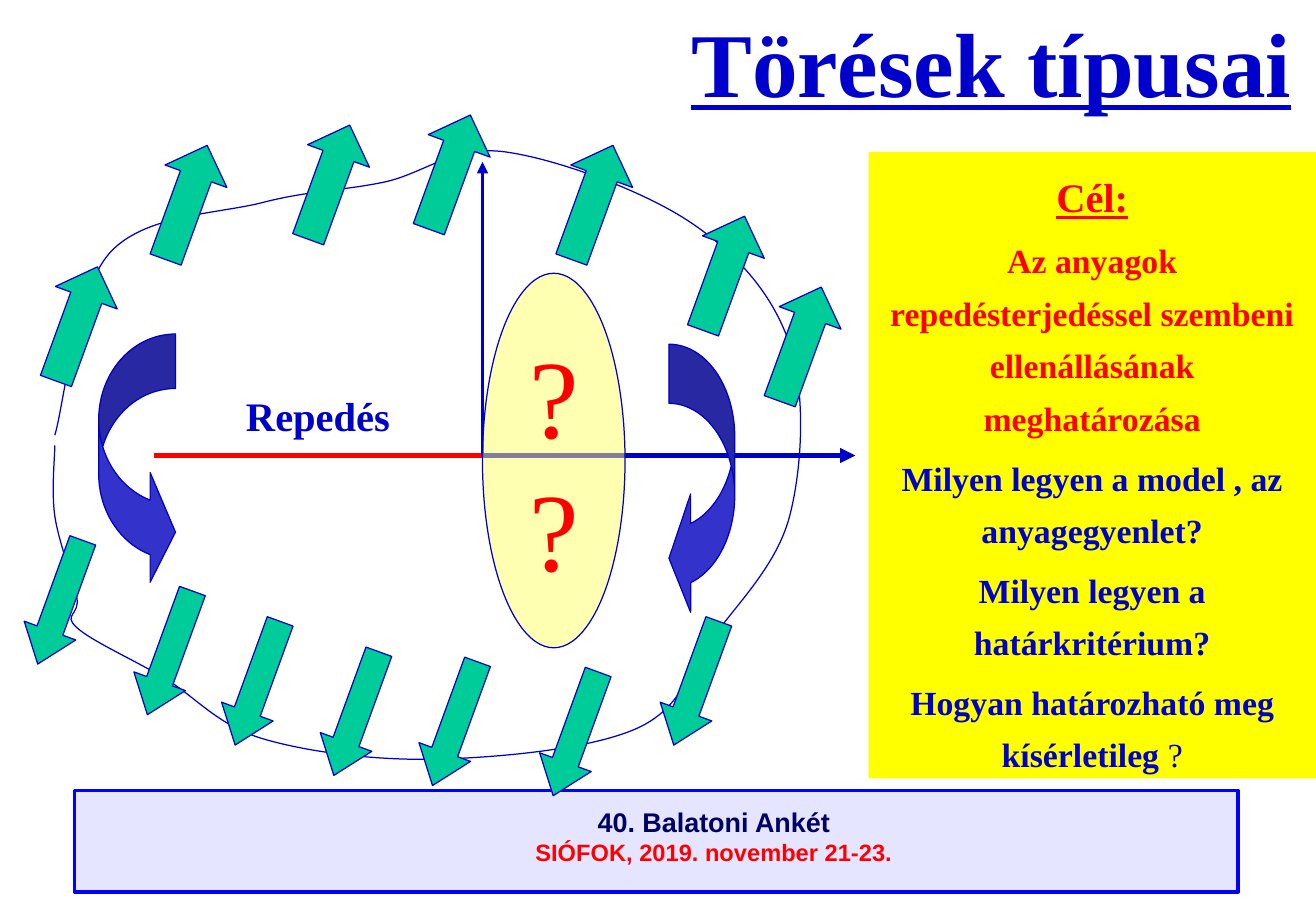
from dataclasses import dataclass

from lxml.etree import SubElement as Sub
from pptx import Presentation
from pptx.dml.color import RGBColor as Rgb
from pptx.enum.shapes import MSO_CONNECTOR as Link, MSO_SHAPE as Kind
from pptx.enum.text import MSO_ANCHOR as Anchor, MSO_AUTO_SIZE as Fit, PP_ALIGN as Align
from pptx.oxml.ns import qn
from pptx.util import Inches, Pt

COLS, ROWS = 120, 90


@dataclass(frozen=True)
class Theme:
    blue: str = "0000CC"
    red: str = "FF0000"
    green: str = "00CC99"
    bend: str = "3333CC"
    sun: str = "FFFF00"
    pale: str = "FFFF66"
    bar: str = "CCCCFF"
    edge: str = "0000FF"
    navy: str = "000066"
    serif: str = "Times New Roman"
    sans: str = "Arial"
    huge: int = 66
    title: int = 54
    head: int = 24
    body: int = 20
    foot: int = 16
    note: int = 14
    thin: float = 0.75
    mid: float = 2.25
    thick: float = 3


def write(frame, text, size, color, font=Theme.serif, bold=True, under=False,
          space=None, before=0, para=None):
    """Add a centred paragraph, or a further run to the given one."""
    if para is None:
        para = frame.paragraphs[0]
        if para.runs:
            para = frame.add_paragraph()
            para.space_before = Pt(before)
        else:
            para.space_before = Pt(0)
        para.alignment = Align.CENTER
        if space:
            para.line_spacing = space
    run = para.add_run()
    run.text = text
    face = run.font
    face.name, face.size = font, Pt(size)
    face.bold, face.underline = bold, under
    face.color.rgb = Rgb.from_string(color)
    return para


class Board:
    def __init__(self, deck, theme):
        self.theme = theme
        self.wide, self.high = deck.slide_width, deck.slide_height
        self.slide = deck.slides.add_slide(deck.slide_layouts[1])
        self.shapes = self.slide.shapes

    def x(self, col):
        return round(self.wide * col / COLS)

    def y(self, row):
        return round(self.high * row / ROWS)

    def area(self, col, row, wide, high):
        return self.x(col), self.y(row), self.x(wide), self.y(high)

    def stroke(self, item, color, width):
        item.line.color.rgb = Rgb.from_string(color)
        item.line.width = Pt(width)

    def shape(self, kind, box, fill, line=Theme.blue, width=Theme.thin,
              turn=0, adj=(), alpha=None):
        item = self.shapes.add_shape(kind, *self.area(*box))
        item.shadow.inherit = False
        item.rotation = turn
        for i, value in enumerate(adj):
            item.adjustments[i] = value
        item.fill.solid()
        item.fill.fore_color.rgb = Rgb.from_string(fill)
        if alpha:
            tint = item._element.spPr.find(qn("a:solidFill"))[0]
            Sub(tint, qn("a:alpha"), val=str(alpha * 1000))
        self.stroke(item, line, width)
        return item

    def line(self, start, end, color, width, arrow=False):
        item = self.shapes.add_connector(
            Link.STRAIGHT, self.x(start[0]), self.y(start[1]),
            self.x(end[0]), self.y(end[1]))
        self.stroke(item, color, width)
        if arrow:
            Sub(item._element.spPr.get_or_add_ln(), qn("a:tailEnd"), type="triangle")
        Sub(item._element.spPr, qn("a:effectLst"))

    def curve(self, knots):
        """Draw a smooth open line, one cubic piece between two knots."""
        dots = [(self.x(col), self.y(row)) for col, row in knots]
        pen = self.shapes.build_freeform(*dots[0])
        pen.add_line_segments(dots[1:], close=False)
        item = pen.convert_to_shape()
        item.shadow.inherit = False
        item.fill.background()
        self.stroke(item, self.theme.blue, self.theme.thin)
        root = item._element.spPr
        pts = [(int(pt.get("x")), int(pt.get("y"))) for pt in root.iter(qn("a:pt"))]
        ends = [pts[0], *pts, pts[-1]]
        steps = list(root.iter(qn("a:lnTo")))
        for step, a, b, c, d in zip(steps, ends, ends[1:], ends[2:], ends[3:]):
            step.tag = qn("a:cubicBezTo")
            step.remove(step[0])
            out = [q + (r - p) / 6 for p, q, r in zip(a, b, c)]
            into = [r - (s - q) / 6 for q, r, s in zip(b, c, d)]
            for px, py in (out, into, c):
                Sub(step, qn("a:pt"), x=str(round(px)), y=str(round(py)))

    def label(self, box, anchor=Anchor.MIDDLE):
        frame = self.shapes.add_textbox(*self.area(*box)).text_frame
        frame.word_wrap = True
        frame.vertical_anchor = anchor
        return frame

    def holder(self, item, box, anchor):
        item.left, item.top, item.width, item.height = self.area(*box)
        frame = item.text_frame
        frame.word_wrap, frame.auto_size = True, Fit.NONE
        frame.vertical_anchor = anchor
        frame.margin_left = frame.margin_right = Inches(0.1)
        frame.margin_top = frame.margin_bottom = Inches(0.05)
        return frame

    def plain(self, frame):
        for para in frame.paragraphs:
            prop = para._p.get_or_add_pPr()
            prop.set("marL", "0")
            prop.set("indent", "0")
            Sub(prop, qn("a:buNone"))


def main():
    deck = Presentation()
    deck.slide_width, deck.slide_height = Inches(10.83), Inches(7.5)
    look = Theme()
    board = Board(deck, look)

    # Footer bar
    board.shape(Kind.RECTANGLE, (6.8, 78.1, 106.1, 10), look.bar, look.edge,
                look.mid, alpha=50)
    foot = board.label((19.85, 79, 90.5, 7.3), Anchor.TOP)
    write(foot, "40. Balatoni Ankét", look.foot, look.navy, font=look.sans)
    write(foot, "SIÓFOK, 2019. november 21-23.", look.note, look.red, font=look.sans)

    # Title
    head = board.holder(board.shapes.title, (60.8, 0, 59.2, 12.1), Anchor.MIDDLE)
    write(head, "Törések típusai", look.title, look.blue, under=True)

    # Crack and axes
    tip = (44, 45)
    board.line((14, 45), tip, look.red, look.thick)
    board.line(tip, (78, 45), look.blue, look.thick, arrow=True)
    board.line(tip, (44, 16), look.blue, look.mid, arrow=True)
    write(board.label((20, 38, 18, 6)), "Repedés", look.head, look.blue)

    # Unknown zone at the crack tip
    zone = board.shape(Kind.OVAL, (44, 27, 13, 37), look.pale, alpha=50).text_frame
    zone.word_wrap, zone.vertical_anchor = False, Anchor.MIDDLE
    for mark in "??":
        write(zone, mark, look.huge, look.red, bold=False)

    # Body outline
    board.curve([(5, 43), (10, 25), (24, 20), (35, 18), (46, 15), (63, 22),
                 (72, 34), (72, 51), (65, 63), (58, 72), (40, 75), (24, 73),
                 (15, 67), (7, 62), (7, 59), (5, 51), (5, 44)])

    # Loads: up along the top, down along the bottom
    ups = [(4, 26), (14, 14), (27, 12), (38, 11), (51, 14), (63, 21), (70, 28)]
    downs = [(3, 53), (13, 58), (21, 61), (30, 64), (39, 65), (50, 66), (61, 61)]
    for kind, spots, size, adj in (
            (Kind.UP_ARROW, ups, (6, 12), (0.5, 0.5)),
            (Kind.DOWN_ARROW, downs, (5, 13), (0.5, 0.65))):
        for spot in spots:
            board.shape(kind, spot + size, look.green, turn=20, adj=adj)

    # Bending moments
    board.shape(Kind.CURVED_RIGHT_ARROW, (9, 33, 7, 25), look.bend,
                adj=(0.71, 1.43, 0.33))
    board.shape(Kind.CURVED_LEFT_ARROW, (61, 34, 6, 27), look.bend,
                adj=(0.9, 1.8, 0.33))

    # Goal panel
    panel = board.slide.placeholders[1]
    panel.fill.solid()
    panel.fill.fore_color.rgb = Rgb.from_string(look.sun)
    goal = board.holder(panel, (79.2, 15, 40.8, 61.9), Anchor.TOP)
    write(goal, "Cél:", look.head, look.red, under=True, space=1.3)
    for text, color in (
            ("Az anyagok repedésterjedéssel szembeni ellenállásának meghatározása",
             look.red),
            ("Milyen legyen a model , az anyagegyenlet?", look.blue),
            ("Milyen legyen a határkritérium?", look.blue),
            ("Hogyan határozható meg kísérletileg ", look.blue)):
        last = write(goal, text, look.body, color, space=1.3, before=4)
    write(goal, "?", look.body, look.blue, bold=False, para=last)
    board.plain(goal)

    deck.save("out.pptx")


if __name__ == "__main__":
    main()
